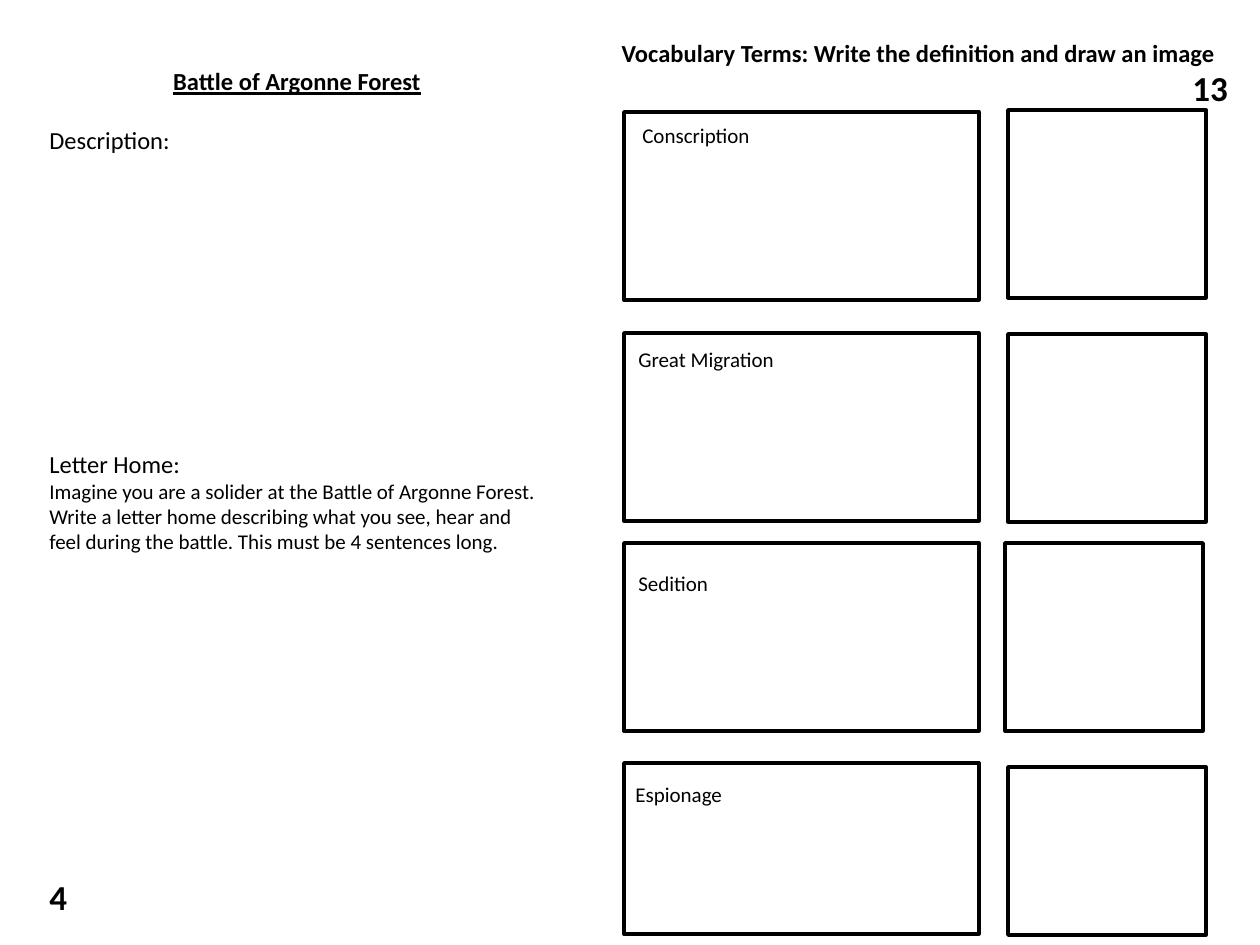
import pptx
import pptx.dml.color
import pptx.enum.shapes
import pptx.enum.text
import pptx.util

EMU_PER_PX = 914400 / 126
INK = "000000"
ALIGN = pptx.enum.text.PP_ALIGN

# term, label left/top/width, definition top/height, drawing left/top/height
TERMS = [
    ("Conscription", (630, 116, 305), (112, 188), (1008, 110, 188)),
    ("Great Migration", (626, 340, 290), (333, 188), (1008, 334, 188)),
    ("Sedition", (626, 564, 210), (543, 188), (1005, 543, 188)),
    ("Espionage", (623, 775, 284), (763, 171), (1008, 767, 168)),
]


def px(length):
    return pptx.util.Emu(round(length * EMU_PER_PX))


def colour(value):
    return pptx.dml.color.RGBColor.from_string(value)


def set_values(target, values):
    for name, value in values.items():
        setattr(target, name, value)


def place(shape, left, top, width, height):
    set_values(shape, {"left": px(left), "top": px(top),
                       "width": px(width), "height": px(height)})


def write(para, text, size, **font):
    span = para.add_run()
    span.text = text
    set_values(span.font, {"name": "Calibri", "size": pptx.util.Pt(size), **font})
    span.font.color.rgb = colour(INK)


def add_text(page, area, lines):
    """Add a text box; each line is (text, size, font values, paragraph values)."""
    box = page.shapes.add_textbox(*map(px, area))
    box.text_frame.word_wrap = True
    for index, (text, size, font, layout) in enumerate(lines):
        para = box.text_frame.add_paragraph() if index else box.text_frame.paragraphs[0]
        set_values(para, layout)
        write(para, text, size, **font)


def add_frame(page, *area):
    frame = page.shapes.add_shape(pptx.enum.shapes.MSO_SHAPE.RECTANGLE, *map(px, area))
    frame.shadow.inherit = False
    frame.fill.background()
    frame.line.color.rgb = colour(INK)
    frame.line.width = pptx.util.Pt(2)


def add_heading(page, text):
    title = page.shapes.title
    place(title, 609, 32, 634, 53)
    set_values(title.text_frame, {
        "word_wrap": True,
        "auto_size": pptx.enum.text.MSO_AUTO_SIZE.NONE,
        "vertical_anchor": pptx.enum.text.MSO_ANCHOR.TOP,
    })
    para = title.text_frame.paragraphs[0]
    para.alignment = ALIGN.LEFT
    write(para, text, 14, bold=True)


def add_battle_page(page):
    add_text(page, (37, 60, 520, 505), [
        ("Battle of Argonne Forest", 14, {"bold": True, "underline": True},
         {"alignment": ALIGN.CENTER}),
        ("Description:", 14, {}, {"space_before": pptx.util.Pt(17)}),
        ("Letter Home:", 14, {}, {"space_before": pptx.util.Pt(168)}),
        ("Imagine you are a solider at the Battle of Argonne Forest. Write a letter "
         "home describing what you see, hear and feel during the battle. This must "
         "be 4 sentences long.", 12, {}, {}),
    ])


def add_vocabulary_page(page):
    add_heading(page, "Vocabulary Terms: Write the definition and draw an image")
    for term, label, definition, drawing in TERMS:
        left, top, height = drawing
        add_frame(page, 624, definition[0], 355, definition[1])
        add_frame(page, left, top, 198, height)
        add_text(page, (*label, 38), [(term, 12, {}, {})])


def add_page_number(page, number, left, top, width):
    add_text(page, (left, top, width, 55), [(number, 20, {"bold": True}, {})])


def main():
    deck = pptx.Presentation()
    set_values(deck, {"slide_width": px(1260), "slide_height": px(945)})
    page = deck.slides.add_slide(deck.slide_layouts.get_by_name("Title Only"))
    add_battle_page(page)
    add_vocabulary_page(page)
    add_page_number(page, "4", 37, 869, 53)
    add_page_number(page, "13", 1180, 60, 73)
    deck.save("out.pptx")


if __name__ == "__main__":
    main()
